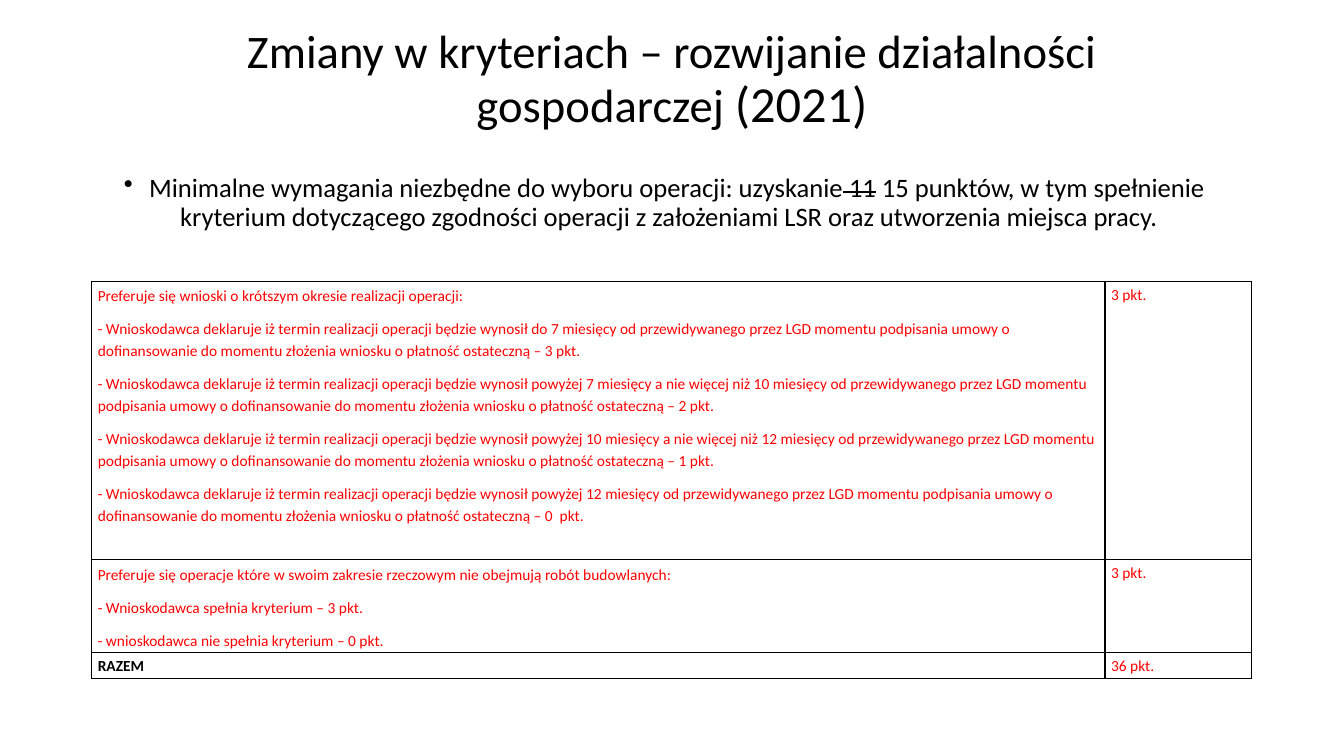
from lxml import etree
from pptx import Presentation
from pptx.dml.color import RGBColor
from pptx.enum.text import MSO_ANCHOR, MSO_AUTO_SIZE, PP_ALIGN
from pptx.oxml import parse_xml
from pptx.oxml.ns import nsdecls, qn
from pptx.util import Inches, Pt

CENTER = PP_ALIGN.CENTER
MIDDLE = MSO_ANCHOR.MIDDLE
NO_AUTOFIT = MSO_AUTO_SIZE.NONE
TITLE_ONLY = 5
BLACK, RED = "000000", "FF0000"


def set_font(font, size, color=BLACK, bold=False):
    font.name = "Calibri"
    font.size = Pt(size)
    font.bold = bold
    font.color.rgb = RGBColor.from_string(color)


def add_border(cell, side):
    cell._tc.get_or_add_tcPr().append(parse_xml(
        f'<a:{side} {nsdecls("a")} w="12700"><a:solidFill>'
        f'<a:srgbClr val="{BLACK}"/></a:solidFill></a:{side}>'))


prs = Presentation()
prs.slide_width = Inches(13.33)
prs.slide_height = Inches(7.5)
s = prs.slides.add_slide(prs.slide_layouts[TITLE_ONLY])

title = s.shapes.title
title.left, title.top = Inches(1.1), Inches(0.19)
title.width, title.height = Inches(11.13), Inches(1.22)
tf = title.text_frame
tf.auto_size = NO_AUTOFIT
tf.word_wrap = True
tf.vertical_anchor = MIDDLE
p = tf.paragraphs[0]
p.alignment = CENTER
p.line_spacing = 0.9
for text, size in [
    ("Zmiany w kryteriach – rozwijanie działalności gospodarczej ", 33.3),
    ("(2021)", 36),
]:
    r = p.add_run()
    r.text = text
    set_font(r.font, size)

requirement = s.shapes.add_textbox(Inches(1.1), Inches(1.6), Inches(11.13), Inches(0.84))
tf = requirement.text_frame
tf.word_wrap = True
tf.vertical_anchor = MIDDLE
p = tf.paragraphs[0]
p.alignment = CENTER
p.line_spacing = 0.9
p.space_after = Pt(9.9)
set_font(p.font, 19)
pPr = p._p.get_or_add_pPr()
pPr.set("marL", "0")
pPr.set("indent", str(-Inches(0.25)))
bullet = etree.Element(qn("a:buChar"), char="•")
pPr.find(qn("a:defRPr")).addprevious(bullet)
for text, strike in [
    ("Minimalne wymagania niezbędne do wyboru operacji: uzyskanie", "noStrike"),
    (" 11", "sngStrike"),
    (" 15 punktów, w tym spełnienie kryterium dotyczącego zgodności operacji "
     "z założeniami LSR oraz utworzenia miejsca pracy. ", "noStrike"),
]:
    r = p.add_run()
    r.text = text
    set_font(r.font, 19)
    r._r.get_or_add_rPr().set("strike", strike)

periods = [
    ("do 7 miesięcy", "3"),
    ("powyżej 7 miesięcy a nie więcej niż 10 miesięcy", "2"),
    ("powyżej 10 miesięcy a nie więcej niż 12 miesięcy", "1"),
    ("powyżej 12 miesięcy", "0 "),
]
deadlines = [
    f"- Wnioskodawca deklaruje iż termin realizacji operacji będzie wynosił {period} "
    "od przewidywanego przez LGD momentu podpisania umowy o dofinansowanie "
    f"do momentu złożenia wniosku o płatność ostateczną – {points} pkt."
    for period, points in periods
]
rows = [
    (2.76, ["Preferuje się wnioski o krótszym okresie realizacji operacji:"] + deadlines, "3 pkt."),
    (0.92, ["Preferuje się operacje które w swoim zakresie rzeczowym nie obejmują robót budowlanych:",
            "- Wnioskodawca spełnia kryterium – 3 pkt.",
            "- wnioskodawca nie spełnia kryterium – 0 pkt."], "3 pkt."),
    (0.26, ["RAZEM"], "36 pkt."),
]
table = s.shapes.add_table(len(rows), 2, Inches(0.91), Inches(2.79), Inches(11.5), Inches(3.94)).table
table.first_row = False
table.horz_banding = False
for column, width in zip(table.columns, [10.05, 1.45]):
    column.width = Inches(width)

for i, (height, criteria, points) in enumerate(rows):
    table.rows[i].height = Inches(height)
    for j, lines in enumerate([criteria, [points]]):
        cell = table.cell(i, j)
        cell.margin_left = Inches(0.06)
        cell.margin_top = cell.margin_right = Inches(0.03)
        cell.margin_bottom = 0
        for side in ("lnL", "lnR", "lnT", "lnB"):
            add_border(cell, side)
        cell.fill.background()
        tf = cell.text_frame
        tf.text = "\n".join(lines)
        is_total = lines == ["RAZEM"]
        for p in tf.paragraphs:
            p.line_spacing = 1.07 if len(lines) == 1 else 1.15
            p.space_after = Pt(8)
            set_font(p.runs[0].font, 11, BLACK if is_total else RED, is_total)

prs.save("out.pptx")
